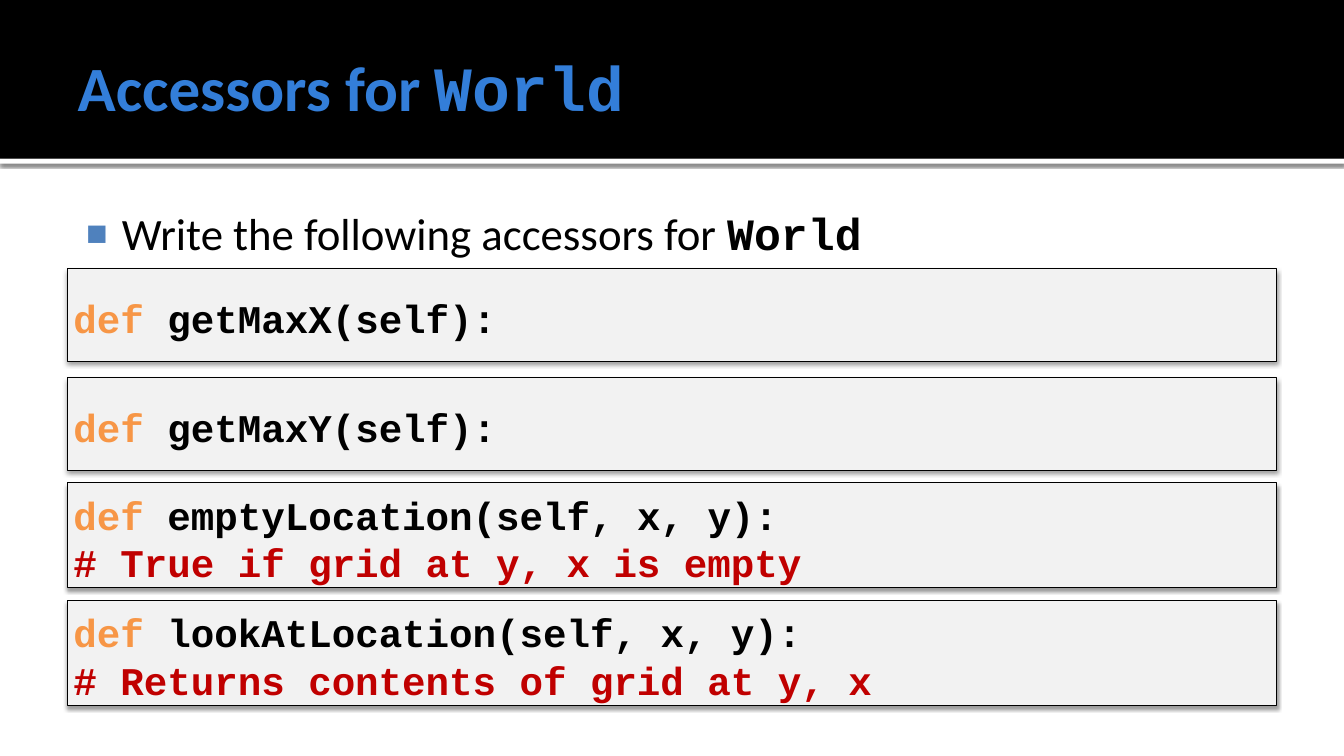
from dataclasses import dataclass

from lxml.etree import SubElement
from pptx import Presentation
from pptx.dml.color import RGBColor
from pptx.enum.shapes import MSO_SHAPE
from pptx.enum.text import MSO_ANCHOR, MSO_AUTO_SIZE, PP_ALIGN
from pptx.oxml.ns import qn
from pptx.util import Emu, Pt

PX = 9525  # EMU per px, 96 px to the inch


@dataclass(frozen=True)
class Theme:
    text_font: str = "Calibri"
    code_font: str = "Courier New"
    white: str = "FFFFFF"
    black: str = "000000"
    title: str = "337ED9"
    bullet: str = "4F81BD"
    panel: str = "F2F2F2"
    keyword: str = "F79646"
    comment: str = "C00000"
    title_size: int = 45
    body_size: int = 32
    code_size: int = 28
    code_leading: int = 34


def px(length):
    return Emu(length * PX)


class SlideBuilder:
    def __init__(self, deck, theme):
        self.theme = theme
        self.page = deck.slides.add_slide(deck.slide_layouts[1])

    def place(self, box, left, top, width, height):
        box.left, box.top = px(left), px(top)
        box.width, box.height = px(width), px(height)

    def frame(self, box, insets, anchor):
        frame = box.text_frame
        frame.word_wrap = True
        frame.auto_size = MSO_AUTO_SIZE.NONE
        frame.vertical_anchor = anchor
        (frame.margin_left, frame.margin_top,
         frame.margin_right, frame.margin_bottom) = map(px, insets)
        return frame

    def span(self, para, text, font, size, color, bold=False):
        span = para.add_run()
        span.text = text
        span.font.name = font
        span.font.size = Pt(size)
        span.font.bold = bold
        span.font.color.rgb = RGBColor.from_string(color)

    def shadow(self, box, alpha, blur, distance):
        box.shadow.inherit = False
        effects = box._element.spPr.find(qn("a:effectLst"))
        outer = SubElement(effects, qn("a:outerShdw"), blurRad=str(Pt(blur)),
                           dist=str(Pt(distance)), dir="5400000", rotWithShape="0")
        color = SubElement(outer, qn("a:srgbClr"), val=self.theme.black)
        SubElement(color, qn("a:alpha"), val=str(alpha * 1000))

    def rectangle(self, left, top, width, height, fill):
        box = self.page.shapes.add_shape(
            MSO_SHAPE.RECTANGLE, px(left), px(top), px(width), px(height))
        box.shadow.inherit = False
        box.fill.solid()
        box.fill.fore_color.rgb = RGBColor.from_string(fill)
        box.line.fill.background()
        return box

    def header(self, width, height, rule_height):
        band = self.rectangle(0, 0, width, height, self.theme.black)
        rule = self.rectangle(0, height, width, rule_height, self.theme.white)
        self.shadow(rule, 60, 2.5, 0.8)
        # Both go behind the placeholders, the rule rearmost
        for box in (band, rule):
            self.page.shapes._spTree.insert(2, box._element)

    def title(self, text, code, *area):
        theme = self.theme
        box = self.page.shapes.title
        self.place(box, *area)
        para = self.frame(box, (10, 5, 5, 5), MSO_ANCHOR.MIDDLE).paragraphs[0]
        para.alignment = PP_ALIGN.LEFT
        for words, font in ((text, theme.text_font), (code, theme.code_font)):
            self.span(para, words, font, theme.title_size, theme.title, True)

    def bullet(self, text, code, *area):
        theme = self.theme
        box = self.page.placeholders[1]
        self.place(box, *area)
        para = self.frame(box, (6, 10, 10, 5), MSO_ANCHOR.TOP).paragraphs[0]
        para.space_before = Pt(0)
        properties = para._p.get_or_add_pPr()
        properties.set("marL", str(px(46)))
        properties.set("indent", str(px(-34)))
        color = SubElement(properties, qn("a:buClr"))
        SubElement(color, qn("a:srgbClr"), val=theme.bullet)
        SubElement(properties, qn("a:buSzPct"), val="80000")
        SubElement(properties, qn("a:buFont"), typeface="Arial")
        SubElement(properties, qn("a:buChar"), char="■")
        self.span(para, text, theme.text_font, theme.body_size, theme.black)
        self.span(para, code, theme.code_font, theme.body_size, theme.black, True)

    def code_panel(self, lines, *area):
        theme = self.theme
        box = self.rectangle(*area, theme.panel)
        box.line.color.rgb = RGBColor.from_string(theme.black)
        box.line.width = Pt(0.75)
        self.shadow(box, 38, 3.1, 1.6)
        frame = self.frame(box, (6, 10, 10, 5), MSO_ANCHOR.MIDDLE)
        for number, line in enumerate(lines):
            para = frame.add_paragraph() if number else frame.paragraphs[0]
            para.alignment = PP_ALIGN.LEFT
            para.line_spacing = Pt(theme.code_leading)
            for text, color in line:
                self.span(para, text, theme.code_font, theme.code_size, color, True)


def main():
    deck = Presentation()
    deck.slide_width, deck.slide_height = px(1280), px(720)
    theme = Theme()
    slide = SlideBuilder(deck, theme)

    # Header and bullet
    slide.header(1280, 151, 5)
    slide.title("Accessors for ", "World", 64, 16, 1152, 132)
    slide.bullet("Write the following accessors for ", "World", 64, 186, 1152, 486)

    # One panel per accessor: top, height, signature, comment
    accessors = [
        (256, 88, "getMaxX(self):", None),
        (360, 88, "getMaxY(self):", None),
        (460, 100, "emptyLocation(self, x, y):", "# True if grid at y, x is empty"),
        (572, 100, "lookAtLocation(self, x, y):", "# Returns contents of grid at y, x"),
    ]
    for top, height, signature, comment in accessors:
        lines = [[("def ", theme.keyword), (signature, theme.black)]]
        if comment:
            lines.append([(comment, theme.comment)])
        slide.code_panel(lines, 64, top, 1152, height)

    deck.save("out.pptx")


if __name__ == "__main__":
    main()
